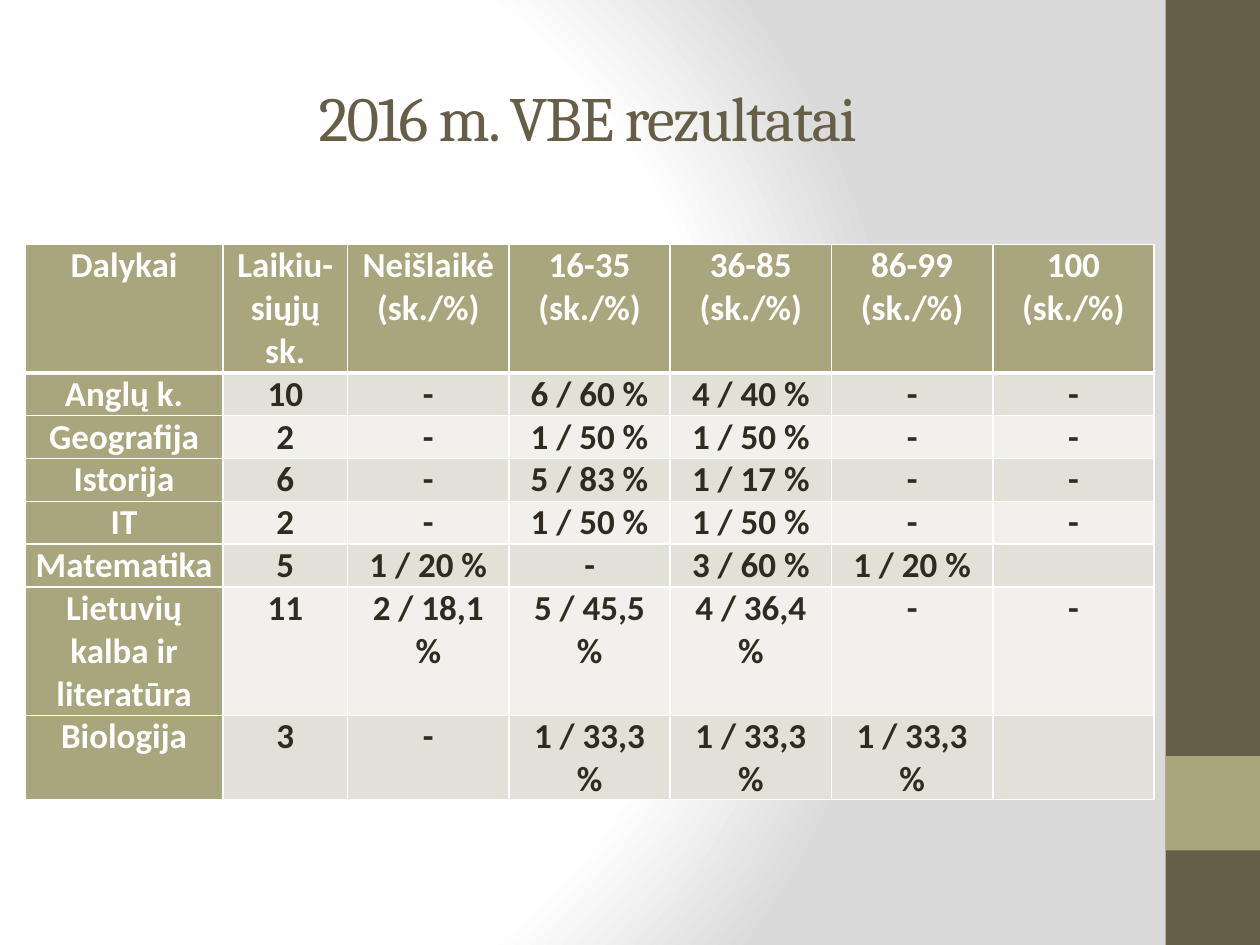
from lxml.etree import SubElement
from pptx import Presentation
from pptx.dml.color import RGBColor
from pptx.enum.shapes import MSO_SHAPE
from pptx.enum.text import MSO_ANCHOR, PP_ALIGN
from pptx.oxml import parse_xml
from pptx.oxml.ns import nsdecls, qn
from pptx.util import Inches, Pt

COLORS = {
    "white": "FFFFFF",
    "grey": "DADADA",
    "brown": "675E47",
    "olive": "A9A57C",
    "ink": "2F2B20",
    "band_dark": "E2E1D7",
    "band_light": "F1F0EC",
}
WIDTH, HEIGHT = Inches(10), Inches(7.5)
LINE = Inches(0.34)
COLUMNS = [1.57, 0.99] + [1.28] * 5
ROW_LINES = [3, 1, 1, 1, 1, 1, 3, 1]
RESULTS = [
    ["Dalykai", "Laikiu-siųjų sk.", "Neišlaikė (sk./%)", "16-35 (sk./%)",
     "36-85 (sk./%)", "86-99 (sk./%)", "100 (sk./%)"],
    ["Anglų k.", "10", "-", "6 / 60 %", "4 / 40 %", "-", "-"],
    ["Geografija", "2", "-", "1 / 50 %", "1 / 50 %", "-", "-"],
    ["Istorija", "6", "-", "5 / 83 %", "1 / 17 %", "-", "-"],
    ["IT", "2", "-", "1 / 50 %", "1 / 50 %", "-", "-"],
    ["Matematika", "5", "1 / 20 %", "-", "3 / 60 %", "1 / 20 %", ""],
    ["Lietuvių kalba ir literatūra", "11", "2 / 18,1 %", "5 / 45,5 %",
     "4 / 36,4 %", "-", "-"],
    ["Biologija", "3", "-", "1 / 33,3 %", "1 / 33,3 %", "1 / 33,3 %", ""],
]


def rgb(name):
    return RGBColor.from_string(COLORS[name])


def set_background(slide):
    """Fill the background with a circular gradient centred to the left."""
    slide.background.fill.solid()
    solid = slide.element.find(".//" + qn("p:bgPr")).find(qn("a:solidFill"))
    stops = "".join(
        f'<a:gs pos="{pos * 1000}"><a:srgbClr val="{COLORS[name]}"/></a:gs>'
        for pos, name in [(0, "white"), (75, "white"), (100, "grey")])
    solid.getparent().replace(solid, parse_xml(
        f'<a:gradFill {nsdecls("a")} rotWithShape="1"><a:gsLst>{stops}</a:gsLst>'
        '<a:path path="circle"><a:fillToRect l="20000" t="50000" r="100000" '
        'b="50000"/></a:path></a:gradFill>'))


def add_side_block(slide, top, height, color):
    """Add a block of the right-hand bar; top and height are slide shares."""
    sp = slide.shapes.add_shape(
        MSO_SHAPE.RECTANGLE, int(WIDTH * 0.925), int(HEIGHT * top),
        int(WIDTH * 0.075), int(HEIGHT * height))
    sp.shadow.inherit = False
    sp.fill.solid()
    sp.fill.fore_color.rgb = rgb(color)
    sp.line.fill.background()


def style_paragraph(p, font, size, color, bold=False):
    p.alignment = PP_ALIGN.CENTER
    p.font.name = font
    p.font.size = Pt(size)
    p.font.bold = bold
    p.font.color.rgb = rgb(color)


def add_title(slide, text):
    sp = slide.shapes.add_textbox(
        int(WIDTH * 0.05), int(HEIGHT * 0.04), Inches(8.33), Inches(1.25))
    tf = sp.text_frame
    tf.word_wrap = True
    tf.vertical_anchor = MSO_ANCHOR.MIDDLE
    p = tf.paragraphs[0]
    r = p.add_run()
    r.text = text
    r.font.element.set("spc", "-100") if hasattr(r.font, "element") else \
        r._r.get_or_add_rPr().set("spc", "-100")
    style_paragraph(p, "Cambria", 36, "brown")


def set_borders(cell, bottom):
    """Draw white borders, 1 pt wide except for the given bottom width."""
    tc_pr = cell._tc.get_or_add_tcPr()
    for side, width in [("L", 1), ("R", 1), ("T", 1), ("B", bottom)]:
        ln = SubElement(tc_pr, qn(f"a:ln{side}"), w=str(Pt(width)))
        fill = SubElement(ln, qn("a:solidFill"))
        SubElement(fill, qn("a:srgbClr"), val=COLORS["white"])


def fill_cell(cell, text, row, col):
    is_head = row == 0 or col == 0
    band = "band_dark" if row % 2 else "band_light"
    cell.text = text
    cell.margin_left = cell.margin_right = Inches(0.07)
    cell.margin_top = cell.margin_bottom = 0
    style_paragraph(cell.text_frame.paragraphs[0], "Calibri", 20,
                    "white" if is_head else "ink", bold=True)
    set_borders(cell, bottom=3 if row == 0 else 1)
    cell.fill.solid()
    cell.fill.fore_color.rgb = rgb("olive" if is_head else band)


def add_results_table(slide):
    table = slide.shapes.add_table(
        len(RESULTS), len(COLUMNS), int(WIDTH * 0.02), Inches(1.94),
        Inches(sum(COLUMNS)), LINE * sum(ROW_LINES)).table
    table.first_row = table.horz_banding = False
    for column, width in zip(table.columns, COLUMNS):
        column.width = Inches(width)
    for row, lines in zip(table.rows, ROW_LINES):
        row.height = LINE * lines
    for i, texts in enumerate(RESULTS):
        for j, text in enumerate(texts):
            fill_cell(table.cell(i, j), text, i, j)


def main():
    prs = Presentation()
    prs.slide_width, prs.slide_height = WIDTH, HEIGHT
    slide = prs.slides.add_slide(prs.slide_layouts[6])
    set_background(slide)
    add_side_block(slide, 0, 1, "brown")
    add_side_block(slide, 0.8, 0.1, "olive")
    add_title(slide, "2016 m. VBE rezultatai")
    add_results_table(slide)
    prs.save("out.pptx")


if __name__ == "__main__":
    main()
